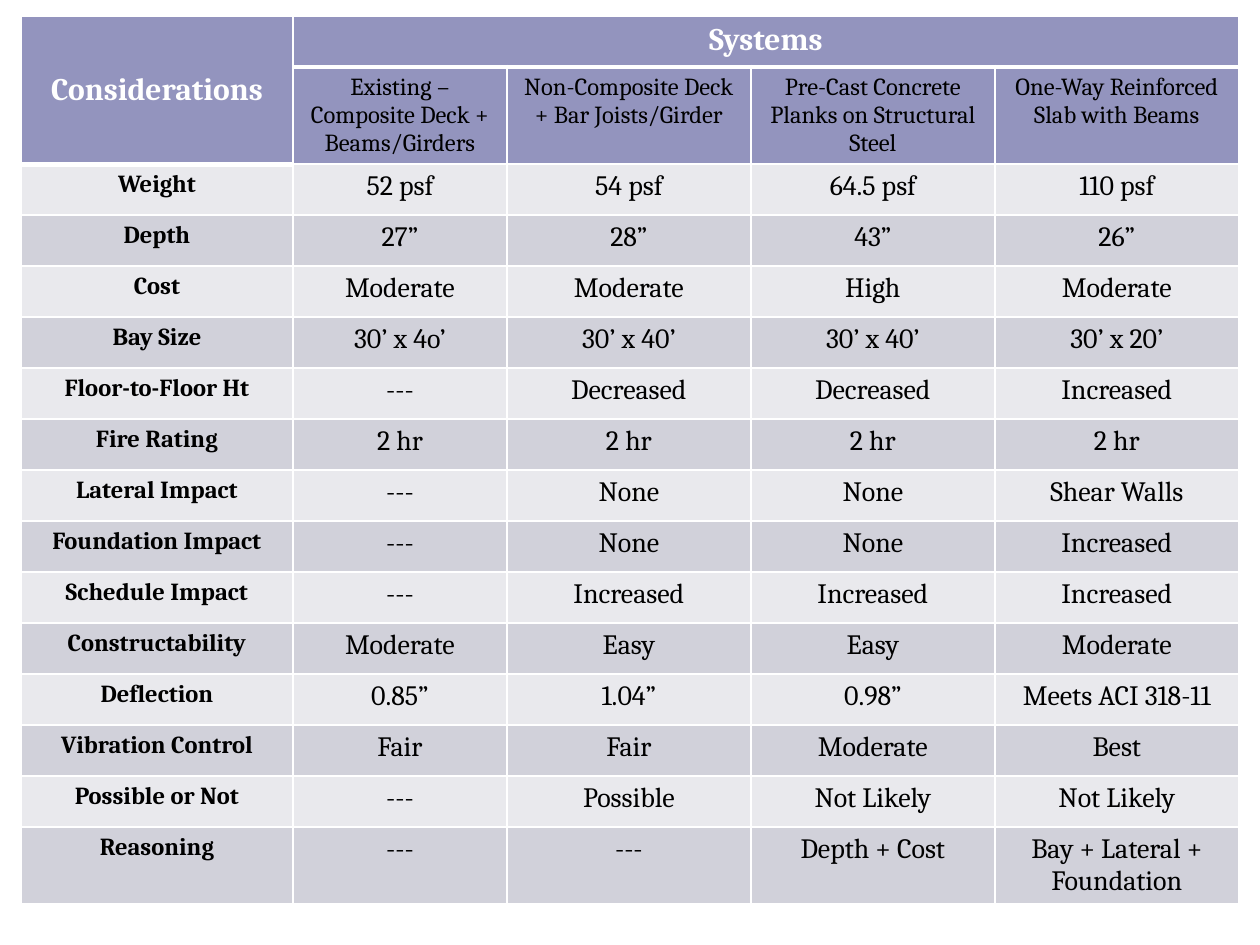
from lxml.etree import SubElement
from pptx import Presentation
from pptx.dml.color import RGBColor
from pptx.enum.text import MSO_ANCHOR, PP_ALIGN
from pptx.oxml.ns import qn
from pptx.util import Emu, Pt

PX = 914400 // 126
COLORS = {
    "header": "9394BE",
    "light": "E9E9ED",
    "dark": "D1D1DA",
    "white": "FFFFFF",
    "black": "000000",
}
COLUMN_WIDTHS = [272, 214, 244, 244, 244]
ROW_HEIGHT = 51

SYSTEMS = [
    "Existing – Composite Deck + Beams/Girders",
    "Non-Composite Deck + Bar Joists/Girder",
    "Pre-Cast Concrete Planks on Structural Steel",
    "One-Way Reinforced Slab with Beams",
]
CONSIDERATIONS = [
    ["Weight", "52 psf", "54 psf", "64.5 psf", "110 psf"],
    ["Depth", "27”", "28”", "43”", "26”"],
    ["Cost", "Moderate", "Moderate", "High", "Moderate"],
    ["Bay Size", "30’ x 4o’", "30’ x 40’", "30’ x 40’", "30’ x 20’"],
    ["Floor-to-Floor Ht", "---", "Decreased", "Decreased", "Increased"],
    ["Fire Rating", "2 hr", "2 hr", "2 hr", "2 hr"],
    ["Lateral Impact", "---", "None", "None", "Shear Walls"],
    ["Foundation Impact", "---", "None", "None", "Increased"],
    ["Schedule Impact", "---", "Increased", "Increased", "Increased"],
    ["Constructability", "Moderate", "Easy", "Easy", "Moderate"],
    ["Deflection", "0.85”", "1.04”", "0.98”", "Meets ACI 318-11"],
    ["Vibration Control", "Fair", "Fair", "Moderate", "Best"],
    ["Possible or Not", "---", "Possible", "Not Likely", "Not Likely"],
    ["Reasoning", "---", "---", "Depth + Cost", "Bay + Lateral + Foundation"],
]


class SlideBuilder:
    def __init__(self, slide, font):
        self.slide = slide
        self.font = font

    def table(self, left, top, widths, row_count, row_height):
        frame = self.slide.shapes.add_table(
            row_count, len(widths), Emu(left * PX), Emu(top * PX),
            Emu(sum(widths) * PX), Emu(row_count * row_height * PX))
        table = frame.table
        table.horz_banding = False
        for column, width in zip(table.columns, widths):
            column.width = Emu(width * PX)
        return table

    def cell(self, cell, text, fill, size, color="black", bold=False, bottom=1):
        self.borders(cell, bottom)
        cell.fill.solid()
        cell.fill.fore_color.rgb = RGBColor.from_string(COLORS[fill])
        cell.text = text
        paragraph = cell.text_frame.paragraphs[0]
        paragraph.alignment = PP_ALIGN.CENTER
        paragraph.font.name = self.font
        paragraph.font.size = Pt(size)
        paragraph.font.bold = bold
        paragraph.font.color.rgb = RGBColor.from_string(COLORS[color])

    def borders(self, cell, bottom):
        properties = cell._tc.get_or_add_tcPr()
        for side, width in (("L", 1), ("R", 1), ("T", 1), ("B", bottom)):
            line = SubElement(properties, qn(f"a:ln{side}"), w=str(Pt(width)))
            solid = SubElement(line, qn("a:solidFill"))
            SubElement(solid, qn("a:srgbClr"), val=COLORS["white"])


def main():
    presentation = Presentation()
    presentation.slide_width = Emu(1260 * PX)
    presentation.slide_height = Emu(945 * PX)
    slide = presentation.slides.add_slide(presentation.slide_layouts[6])
    builder = SlideBuilder(slide, "Cambria")
    comparison = builder.table(
        21, 16, COLUMN_WIDTHS, len(CONSIDERATIONS) + 2, ROW_HEIGHT)

    # Merged headings
    last_column = len(SYSTEMS)
    comparison.cell(0, 0).merge(comparison.cell(1, 0))
    comparison.cell(0, 1).merge(comparison.cell(0, last_column))
    headings = {(0, 0): "Considerations", (0, 1): "Systems"}
    for row, column in [(1, 0)] + [(0, c) for c in range(last_column + 1)]:
        builder.cell(comparison.cell(row, column), headings.get((row, column), ""),
                     "header", 18, "white", bold=True, bottom=3)
    comparison.cell(0, 0).vertical_anchor = MSO_ANCHOR.MIDDLE

    # Names of the systems
    for column, system in enumerate(SYSTEMS, 1):
        builder.cell(comparison.cell(1, column), system, "header", 14)

    # Banded rows of considerations
    for row, values in enumerate(CONSIDERATIONS, 2):
        band = "dark" if row % 2 else "light"
        for column, value in enumerate(values):
            is_label = column == 0
            builder.cell(comparison.cell(row, column), value, band,
                         14 if is_label else 16, bold=is_label)

    presentation.save("out.pptx")


if __name__ == "__main__":
    main()
